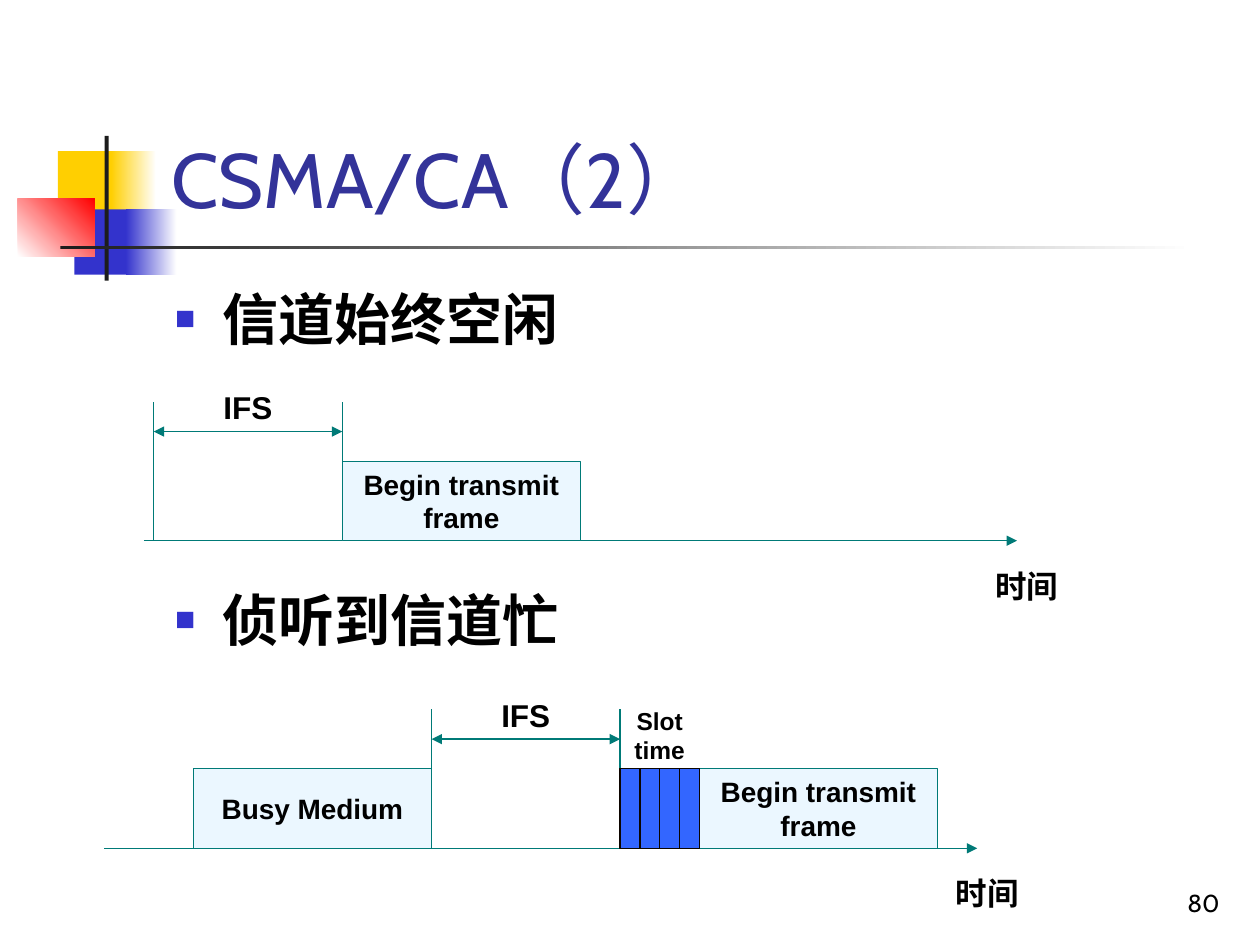
"""Build the CSMA/CA slide with channel timing diagrams for an idle and a busy channel."""
from dataclasses import dataclass

from lxml import etree
from pptx import Presentation
from pptx.dml.color import RGBColor
from pptx.enum.shapes import MSO_CONNECTOR, MSO_SHAPE
from pptx.enum.text import MSO_ANCHOR, PP_ALIGN
from pptx.oxml.ns import qn
from pptx.util import Cm, Pt

RECTANGLE = MSO_SHAPE.RECTANGLE
STRAIGHT = MSO_CONNECTOR.STRAIGHT
TOP, MIDDLE, BOTTOM = MSO_ANCHOR.TOP, MSO_ANCHOR.MIDDLE, MSO_ANCHOR.BOTTOM
LEFT, CENTER, RIGHT = PP_ALIGN.LEFT, PP_ALIGN.CENTER, PP_ALIGN.RIGHT


@dataclass(frozen=True)
class Theme:
    """Colours, fonts and type sizes."""
    title: str = "333399"
    ink: str = "000000"
    white: str = "FFFFFF"
    yellow: str = "FFCF01"
    blue: str = "3333CC"
    red: str = "FF0000"
    dark: str = "1C1C1C"
    line: str = "007A77"
    frame: str = "EBF7FF"
    slot: str = "3366FF"
    slot_line: str = "0C0500"
    heading_font: str = "Cabin"
    label_font: str = "Arial"
    title_size: int = 44
    bullet_size: int = 32
    label_size: int = 18
    frame_size: int = 16
    small_size: int = 14
    line_width: float = 0.75


THEME = Theme()
TITLE = "CSMA/CA（2）"
BULLETS = ["信道始终空闲", "侦听到信道忙"]
PAGE_NUMBER = "80"
BEGIN = "Begin transmit frame"
ORNAMENTS = [
    ((1.17, 3.05, 1.22, 1.32), [THEME.yellow], 0),
    ((2.24, 3.05, 0.91, 1.32), [THEME.yellow, THEME.white], 0),
    ((1.5, 4.22, 1.17, 1.32), [THEME.blue], 0),
    ((2.54, 4.22, 1.02, 1.32), [THEME.blue, THEME.white], 0),
    ((0.36, 4.01, 1.55, 1.17), [THEME.white, THEME.red], 45),
    ((2.11, 2.74, 0.08, 2.92), [THEME.dark], 0),
    ((1.22, 4.95, 22.86, 0.08), [THEME.dark, THEME.white], 0),
]
TIMELINES = [
    {"axis": 10.9, "start": 2.9, "wait": 3.1, "mark_foot": 10.9,
     "frames": [(6.9, BEGIN)], "slots": 0},
    {"axis": 17.1, "start": 2.1, "wait": 8.7, "mark_foot": 17.1,
     "frames": [(3.9, "Busy Medium"), (14.1, BEGIN)], "slots": 4},
]
AXIS_LENGTH, WAIT_LENGTH = 17.6, 3.8
FRAME_WIDTH, FRAME_HEIGHT, SLOT_WIDTH = 4.8, 1.6, 0.4
MARK_HEIGHT, ARROW_HEIGHT = 2.8, 2.2


def style(para, size, font=THEME.label_font, color=THEME.ink, bold=True, align=CENTER):
    para.alignment = align
    para.font.size = Pt(size)
    para.font.name = font
    para.font.bold = bold
    para.font.color.rgb = RGBColor.from_string(color)


def add_text(page, place, lines, size, anchor=TOP, **look):
    box = page.shapes.add_textbox(*map(Cm, place))
    frame = box.text_frame
    frame.word_wrap = True
    frame.vertical_anchor = anchor
    frame.text = "\n".join(lines)
    for para in frame.paragraphs:
        style(para, size, **look)
    return frame


def add_box(page, place, colors, angle=0, line=None, text=""):
    box = page.shapes.add_shape(RECTANGLE, *map(Cm, place))
    box.shadow.inherit = False
    if len(colors) == 1:
        box.fill.solid()
        box.fill.fore_color.rgb = RGBColor.from_string(colors[0])
    else:
        box.fill.gradient()
        box.fill.gradient_angle = angle
        for stop, color in zip(box.fill.gradient_stops, colors):
            stop.color.rgb = RGBColor.from_string(color)
    if line:
        box.line.color.rgb = RGBColor.from_string(line)
        box.line.width = Pt(THEME.line_width)
    else:
        box.line.fill.background()
    if text:
        box.text_frame.word_wrap = True
        box.text_frame.vertical_anchor = MIDDLE
        box.text_frame.text = text
        style(box.text_frame.paragraphs[0], THEME.frame_size)


def add_line(page, start, end, arrows=()):
    line = page.shapes.add_connector(STRAIGHT, *map(Cm, start + end))
    line.line.color.rgb = RGBColor.from_string(THEME.line)
    line.line.width = Pt(THEME.line_width)
    for arrow in arrows:
        etree.SubElement(line.line._get_or_add_ln(), qn(f"a:{arrow}"), type="triangle")
    etree.SubElement(line._element.spPr, qn("a:effectLst"))


def add_bullet(para):
    properties = para._p.get_or_add_pPr()
    properties.set("marL", str(Cm(0.95)))
    properties.set("indent", str(Cm(-0.95)))
    color = etree.SubElement(properties, qn("a:buClr"))
    etree.SubElement(color, qn("a:srgbClr"), val=THEME.blue)
    etree.SubElement(properties, qn("a:buSzPct"), val="60000")
    etree.SubElement(properties, qn("a:buFont"), typeface=THEME.label_font)
    etree.SubElement(properties, qn("a:buChar"), char="■")


def add_title(page):
    title = page.shapes.title
    title.left, title.top, title.width, title.height = map(Cm, (3.2, 0.58, 21.64, 4.06))
    title.text_frame.text = TITLE
    title.text_frame.vertical_anchor = BOTTOM
    style(title.text_frame.paragraphs[0], THEME.title_size, THEME.heading_font,
          THEME.title, bold=False, align=LEFT)


def add_bullets(page):
    frame = add_text(page, (3.28, 5.61, 21.59, 11.43), BULLETS, THEME.bullet_size,
                     font=THEME.heading_font, align=LEFT)
    for para, space in zip(frame.paragraphs, (6.4, 133.5)):
        para.space_before = Pt(space)
        add_bullet(para)


def add_timeline(page, axis, start, wait, mark_foot, frames, slots):
    end, ready, top = start + AXIS_LENGTH, wait + WAIT_LENGTH, axis - FRAME_HEIGHT
    mark, arrow = axis - MARK_HEIGHT, axis - ARROW_HEIGHT
    add_line(page, (start, axis), (end, axis), ["tailEnd"])
    add_text(page, (end - 0.8, axis + 0.4, 2, 1), ["时间"], THEME.label_size)
    for left, text in frames:
        add_box(page, (left, top, FRAME_WIDTH, FRAME_HEIGHT), [THEME.frame],
                line=THEME.line, text=text)
    add_line(page, (wait, mark_foot), (wait, mark))
    add_line(page, (ready, top), (ready, mark))
    add_line(page, (wait, arrow), (ready, arrow), ["headEnd", "tailEnd"])
    add_text(page, (wait, arrow - 1, WAIT_LENGTH, 1), ["IFS"], THEME.label_size)
    for index in range(slots):
        add_box(page, (ready + index * SLOT_WIDTH, top, SLOT_WIDTH, FRAME_HEIGHT),
                [THEME.slot], line=THEME.slot_line)
    if slots:
        add_text(page, (ready - 0.4, top - 1.4, 2.4, 1.45), ["Slot time"], THEME.small_size)


def main():
    deck = Presentation()
    deck.slide_width, deck.slide_height = Cm(25.4), Cm(19.05)
    page = deck.slides.add_slide(deck.slide_layouts[5])
    for place, colors, angle in ORNAMENTS:
        add_box(page, place, colors, angle)
    add_text(page, (19.56, 17.35, 5.28, 1.27), [PAGE_NUMBER], THEME.small_size, BOTTOM,
             font=THEME.heading_font, bold=False, align=RIGHT)
    add_title(page)
    add_bullets(page)
    for timeline in TIMELINES:
        add_timeline(page, **timeline)
    deck.save("out.pptx")


if __name__ == "__main__":
    main()
